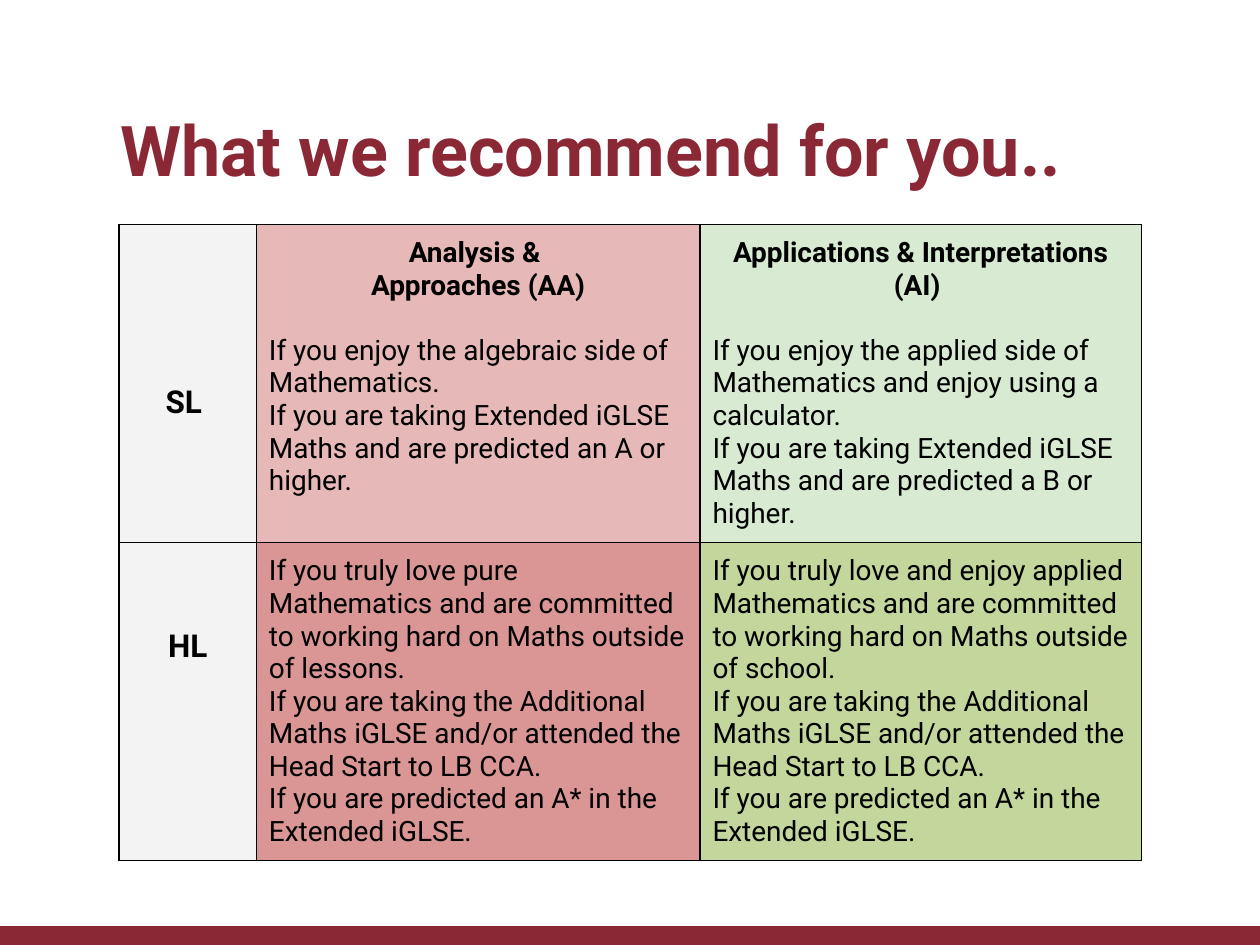
"""Build the maths course recommendation slide."""
import pptx
import pptx.dml.color
import pptx.enum.shapes
import pptx.enum.text
import pptx.oxml
import pptx.oxml.ns
import pptx.util

Pt = pptx.util.Pt
ALIGN = pptx.enum.text.PP_ALIGN
ANCHOR = pptx.enum.text.MSO_ANCHOR
FONT = "Roboto"
COLORS = {
    "maroon": "8A2836",
    "black": "000000",
    "label": "F3F3F3",
    "aa_sl": "E6B9B8",
    "ai_sl": "D9EAD3",
    "aa_hl": "D99694",
    "ai_hl": "C3D69B",
}
COLUMN_WIDTHS = (78.5, 253.5, 252.3)
ROW_HEIGHT = 181.7
CELL_MARGIN = 7.2
HEADING_GAP = 18.6
HL_SHARED = [
    "If you are taking the Additional Maths iGLSE and/or attended the Head Start to LB CCA.",
    "If you are predicted an A* in the Extended iGLSE.",
]
LABELS = [("SL ", 91.2), ("HL", 49.2)]
ADVICE = [
    [
        ("aa_sl", ["Analysis & ", "Approaches (AA)"], [
            "If you enjoy the algebraic side of Mathematics.",
            "If you are taking Extended iGLSE Maths and are predicted an A or higher.",
        ]),
        ("ai_sl", ["Applications & Interpretations (AI) "], [
            "If you enjoy the applied side of Mathematics and enjoy using a calculator.",
            "If you are taking Extended iGLSE Maths and are predicted a B or higher.",
        ]),
    ],
    [
        ("aa_hl", [], [
            "If you truly love pure Mathematics and are committed to working hard on Maths outside of lessons.",
            *HL_SHARED,
        ]),
        ("ai_hl", [], [
            "If you truly love and enjoy applied Mathematics and are committed to working hard on Maths outside of school.",
            *HL_SHARED,
        ]),
    ],
]


def rgb(name):
    """Return the named colour."""
    return pptx.dml.color.RGBColor.from_string(COLORS[name])


def format_paragraph(para, size, bold, align, color="black"):
    """Align a paragraph and set the font of its runs."""
    para.alignment = align
    for span in para.runs:
        span.font.name = FONT
        span.font.size = Pt(size)
        span.font.bold = bold
        span.font.color.rgb = rgb(color)


def add_title(page, text):
    """Place and format the title placeholder."""
    box = page.shapes.title
    box.left, box.top, box.width, box.height = Pt(36), Pt(46.8), Pt(612.7), Pt(75.6)
    frame = box.text_frame
    frame.text = text
    frame.word_wrap = True
    frame.auto_size = pptx.enum.text.MSO_AUTO_SIZE.NONE
    frame.vertical_anchor = ANCHOR.MIDDLE
    format_paragraph(frame.paragraphs[0], 40, True, ALIGN.CENTER, "maroon")


def add_footer_bar(page):
    """Add the coloured bar along the bottom edge."""
    bar = page.shapes.add_shape(
        pptx.enum.shapes.MSO_SHAPE.RECTANGLE, Pt(0), Pt(529.2), Pt(720), Pt(10.8))
    bar.shadow.inherit = False
    bar.fill.solid()
    bar.fill.fore_color.rgb = rgb("maroon")
    bar.line.fill.background()


def style_cell(cell, color):
    """Set a cell's margins, fill and thin black borders."""
    cell.margin_left = cell.margin_right = Pt(CELL_MARGIN)
    cell.margin_top = cell.margin_bottom = Pt(CELL_MARGIN)
    cell.fill.solid()
    cell.fill.fore_color.rgb = rgb(color)
    properties = cell._tc.get_or_add_tcPr()
    for position, side in enumerate(("lnL", "lnR", "lnT", "lnB")):
        border = pptx.oxml.parse_xml(
            f'<a:{side} {pptx.oxml.ns.nsdecls("a")} w="{Pt(0.75)}"><a:solidFill>'
            f'<a:srgbClr val="{COLORS["black"]}"/></a:solidFill></a:{side}>')
        properties.insert(position, border)


def fill_label(cell, text, margin_top):
    """Write a level label at its height in the row."""
    style_cell(cell, "label")
    cell.margin_top = Pt(margin_top)
    cell.text_frame.text = text
    format_paragraph(cell.text_frame.paragraphs[0], 18, True, ALIGN.CENTER)


def fill_advice(cell, color, heading, body):
    """Write centred bold heading lines above the advice."""
    style_cell(cell, color)
    cell.vertical_anchor = ANCHOR.TOP if heading else ANCHOR.MIDDLE
    cell.text_frame.text = "\n".join(heading + body)
    for index, para in enumerate(cell.text_frame.paragraphs):
        is_heading = index < len(heading)
        format_paragraph(para, 16, is_heading, ALIGN.CENTER if is_heading else ALIGN.LEFT)
        if heading and index == len(heading):
            para.space_before = Pt(HEADING_GAP)


def add_advice_table(page):
    """Add the table of advice by level and course."""
    rows, columns = len(ADVICE), len(COLUMN_WIDTHS)
    table = page.shapes.add_table(
        rows, columns, Pt(68), Pt(128.2),
        Pt(sum(COLUMN_WIDTHS)), Pt(rows * ROW_HEIGHT)).table
    table.first_row = table.horz_banding = False
    for column, width in zip(table.columns, COLUMN_WIDTHS):
        column.width = Pt(width)
    for row, (label, entries) in enumerate(zip(LABELS, ADVICE)):
        table.rows[row].height = Pt(ROW_HEIGHT)
        fill_label(table.cell(row, 0), *label)
        for column, entry in enumerate(entries, start=1):
            fill_advice(table.cell(row, column), *entry)


def main():
    """Build and save the deck."""
    deck = pptx.Presentation()
    deck.slide_width, deck.slide_height = Pt(720), Pt(540)
    page = deck.slides.add_slide(deck.slide_layouts[5])
    add_footer_bar(page)
    add_title(page, "What we recommend for you.. ")
    add_advice_table(page)
    deck.save("out.pptx")


if __name__ == "__main__":
    main()
